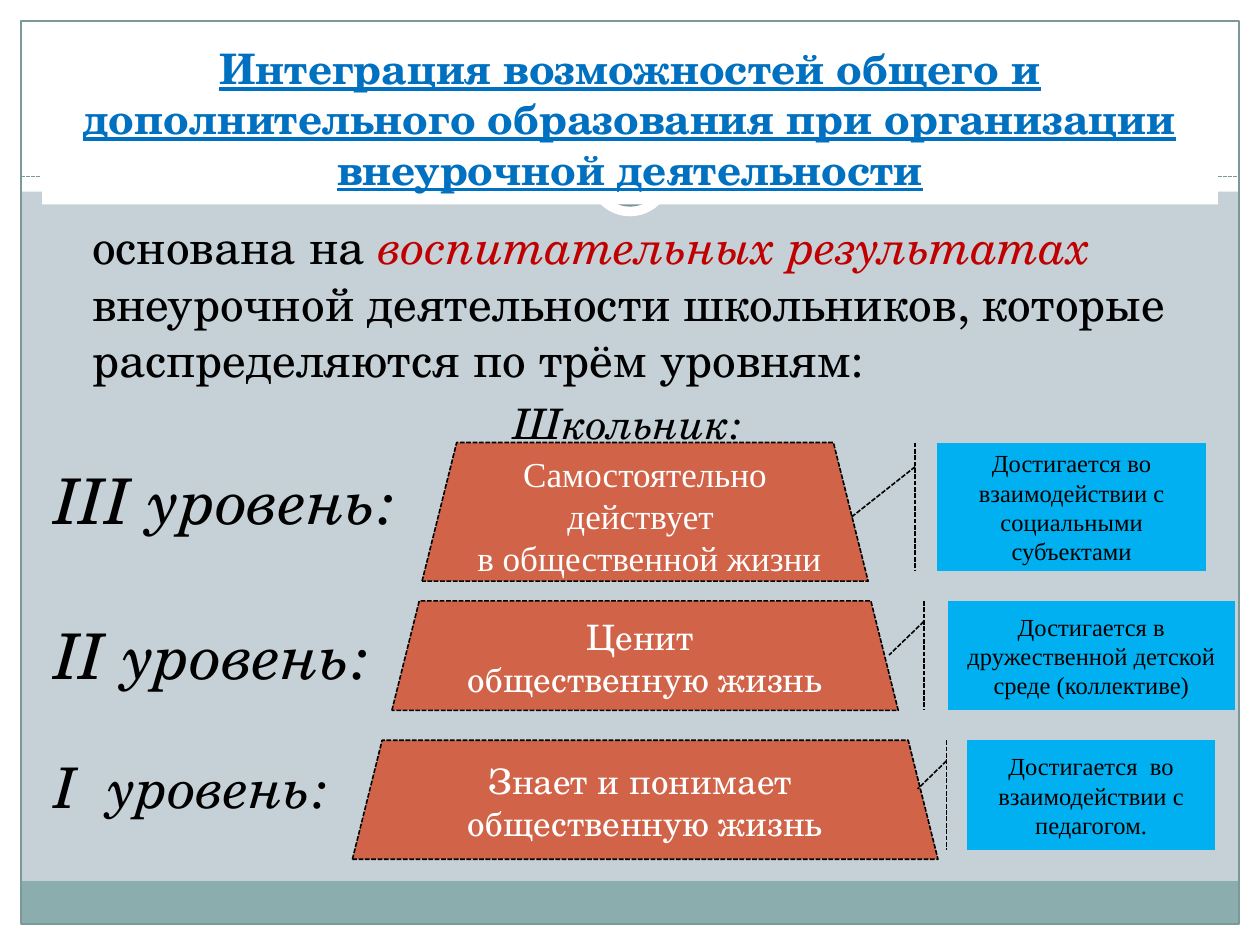
from pptx import Presentation
from pptx.dml.color import RGBColor
from pptx.enum.dml import MSO_LINE
from pptx.enum.shapes import MSO_CONNECTOR, MSO_SHAPE
from pptx.enum.text import MSO_ANCHOR, PP_ALIGN
from pptx.oxml.ns import qn
from pptx.util import Pt

RECT, ELLIPSE = MSO_SHAPE.RECTANGLE, MSO_SHAPE.OVAL
TRAPEZOID = MSO_SHAPE.TRAPEZOID
CALLOUT = MSO_SHAPE.LINE_CALLOUT_1_ACCENT_BAR
STRAIGHT = MSO_CONNECTOR.STRAIGHT
DASH = MSO_LINE.SQUARE_DOT  # written as sysDot
SYS_DASH = "sysDash"
LEFT, CENTER = PP_ALIGN.LEFT, PP_ALIGN.CENTER
TOP, MIDDLE = MSO_ANCHOR.TOP, MSO_ANCHOR.MIDDLE

WHITE = RGBColor(0xFF, 0xFF, 0xFF)
BLACK = RGBColor(0, 0, 0)
BACKGROUND = RGBColor(0xC5, 0xD1, 0xD7)
BAND = RGBColor(0x8C, 0xAD, 0xAE)
FRAME = RGBColor(0x7C, 0x99, 0x9A)
TITLE_BLUE = RGBColor(0x00, 0x70, 0xC0)
ACCENT_RED = RGBColor(0xC0, 0x00, 0x00)
STEP_FILL = RGBColor(0xD1, 0x63, 0x49)
NOTE_FILL = RGBColor(0x00, 0xB0, 0xF0)

SERIF, ROMAN = "TeX Gyre Schola", "Times New Roman"
SLIDE_W, SLIDE_H = 720, 540
MARGIN = 12


def dash_line(line):
    line.dash_style = DASH
    line._ln.find(qn("a:prstDash")).set("val", SYS_DASH)


def add_box(slide, kind, box, fill=None, line=None, width=0.75, dashed=False):
    shape = slide.shapes.add_shape(kind, *map(Pt, box))
    shape.shadow.inherit = False
    if fill is None:
        shape.fill.background()
    else:
        shape.fill.solid()
        shape.fill.fore_color.rgb = fill
    if line is None:
        shape.line.fill.background()
    else:
        shape.line.color.rgb = line
        shape.line.width = Pt(width)
        if dashed:
            dash_line(shape.line)
    return shape


def add_run(paragraph, text, size, color=BLACK, font=SERIF, bold=False,
            italic=False, underline=False):
    run = paragraph.add_run()
    run.text = text
    run.font.name, run.font.size = font, Pt(size)
    run.font.color.rgb = color
    run.font.bold, run.font.italic = bold, italic
    run.font.underline = underline


def write(shape, paragraphs, align=CENTER, anchor=MIDDLE, **style):
    """Each paragraph is a list of (text, overriding style) pairs."""
    frame = shape.text_frame
    frame.word_wrap = True
    frame.vertical_anchor = anchor
    for i, runs in enumerate(paragraphs):
        paragraph = frame.paragraphs[0] if i == 0 else frame.add_paragraph()
        paragraph.alignment = align
        for text, extra in runs:
            add_run(paragraph, text, **{**style, **extra})


def add_text(slide, box, runs, align=LEFT, **style):
    label = slide.shapes.add_textbox(*map(Pt, box))
    frame = label.text_frame
    frame.margin_left = frame.margin_right = 0
    frame.margin_top = frame.margin_bottom = 0
    write(label, [runs], align=align, anchor=TOP, **style)


def draw_frame(slide, box):
    left, top, width, height = box
    right, bottom = left + width, top + height
    inner_w, inner_h = width - 2 * MARGIN, height - 2 * MARGIN
    # White margins and header
    for margin in ((left, bottom - MARGIN, width, MARGIN),
                   (left, top, width, 109.5),
                   (left, top, MARGIN, height),
                   (right - MARGIN, top, MARGIN, height)):
        add_box(slide, RECT, margin, WHITE)
    # Footer band and outline
    add_box(slide, RECT, (left + MARGIN, bottom - 36.5, inner_w, 24.5), BAND)
    add_box(slide, RECT, (left + MARGIN, top + MARGIN, inner_w, inner_h),
            line=FRAME)
    # Dashed divider
    divider = slide.shapes.add_connector(
        STRAIGHT, Pt(left + MARGIN), Pt(top + 100.8),
        Pt(right - MARGIN), Pt(top + 100.8))
    divider.line.color.rgb = FRAME
    divider.line.width = Pt(0.75)
    dash_line(divider.line)
    properties = divider._element.spPr
    properties.append(properties.makeelement(qn("a:effectLst"), {}))
    # Ring on the divider
    middle_x, middle_y = left + width / 2, top + 99.6
    for size, line in ((48, None), (33, FRAME)):
        add_box(slide, ELLIPSE,
                (middle_x - size / 2, middle_y - size / 2, size, size),
                WHITE, line, width=4)


def draw_title(slide, box):
    title = add_box(slide, RECT, box, WHITE)
    text = ("Интеграция возможностей общего и дополнительного образования "
            "при организации внеурочной деятельности")
    write(title, [[(text, {})]], size=24, color=TITLE_BLUE, bold=True,
          underline=True)


def draw_intro(slide, box):
    left, top, width, height = box
    add_text(slide, (left + 21.6, top, width - 21.6, height - 31), [
        ("основана на ", {}),
        ("воспитательных результатах ", {"color": ACCENT_RED, "italic": True}),
        ("внеурочной деятельности школьников, которые распределяются "
         "по трём уровням:", {})], size=27)
    add_text(slide, (left, top + height - 29, width, 29),
             [("Школьник:", {})], align=CENTER, size=24, italic=True)


def draw_level(slide, label, label_box, label_size, step, step_box, step_font,
               note, note_box, pointer):
    add_text(slide, label_box, [(label, {})], size=label_size, italic=True)
    trapezoid = add_box(slide, TRAPEZOID, step_box, STEP_FILL, BLACK, 0.9, True)
    write(trapezoid, [[(line, {})] for line in step],
          size=20, color=WHITE, font=step_font)
    callout = add_box(slide, CALLOUT, note_box, NOTE_FILL, BLACK, 0.9, True)
    for i, value in enumerate((0.188, -0.083, *pointer)):
        callout.adjustments[i] = value
    write(callout, [[(note, {})]], size=14, font=ROMAN)


# label, box, size; step lines, box, font; note, box, pointer end
LEVELS = [
    ("III уровень:", (31, 264, 205, 44), 36,
     ("Самостоятельно действует ", " в общественной жизни"),
     (241.2, 252.9, 254.9, 79.2), ROMAN,
     "Достигается во взаимодействии с социальными субъектами",
     (535.7, 252.9, 153.4, 73.6), (0.577, -0.319)),
    ("II уровень:", (31, 352.5, 190, 44), 36,
     ("Ценит ", "общественную жизнь"),
     (223.9, 343.4, 289.4, 62.6), SERIF,
     "Достигается в дружественной детской среде (коллективе)",
     (541.5, 343.4, 164.2, 62.6), (0.495, -0.204)),
    ("I  уровень:", (31, 430, 170, 39), 32,
     ("Знает и понимает ", "общественную жизнь"),
     (201.4, 423, 334.6, 68), SERIF,
     "Достигается  во взаимодействии с педагогом.",
     (552.6, 423, 141.8, 62.8), (0.443, -0.199)),
]


def main():
    deck = Presentation()
    deck.slide_width, deck.slide_height = Pt(SLIDE_W), Pt(SLIDE_H)
    slide = deck.slides.add_slide(deck.slide_layouts[6])
    slide.background.fill.solid()
    slide.background.fill.fore_color.rgb = BACKGROUND

    draw_frame(slide, (0, 0, SLIDE_W, SLIDE_H))
    draw_title(slide, (24, 18, 672, 98.8))
    draw_intro(slide, (31, 124, 655.2, 132))
    for level in LEVELS:
        draw_level(slide, *level)
    deck.save("out.pptx")


if __name__ == "__main__":
    main()
